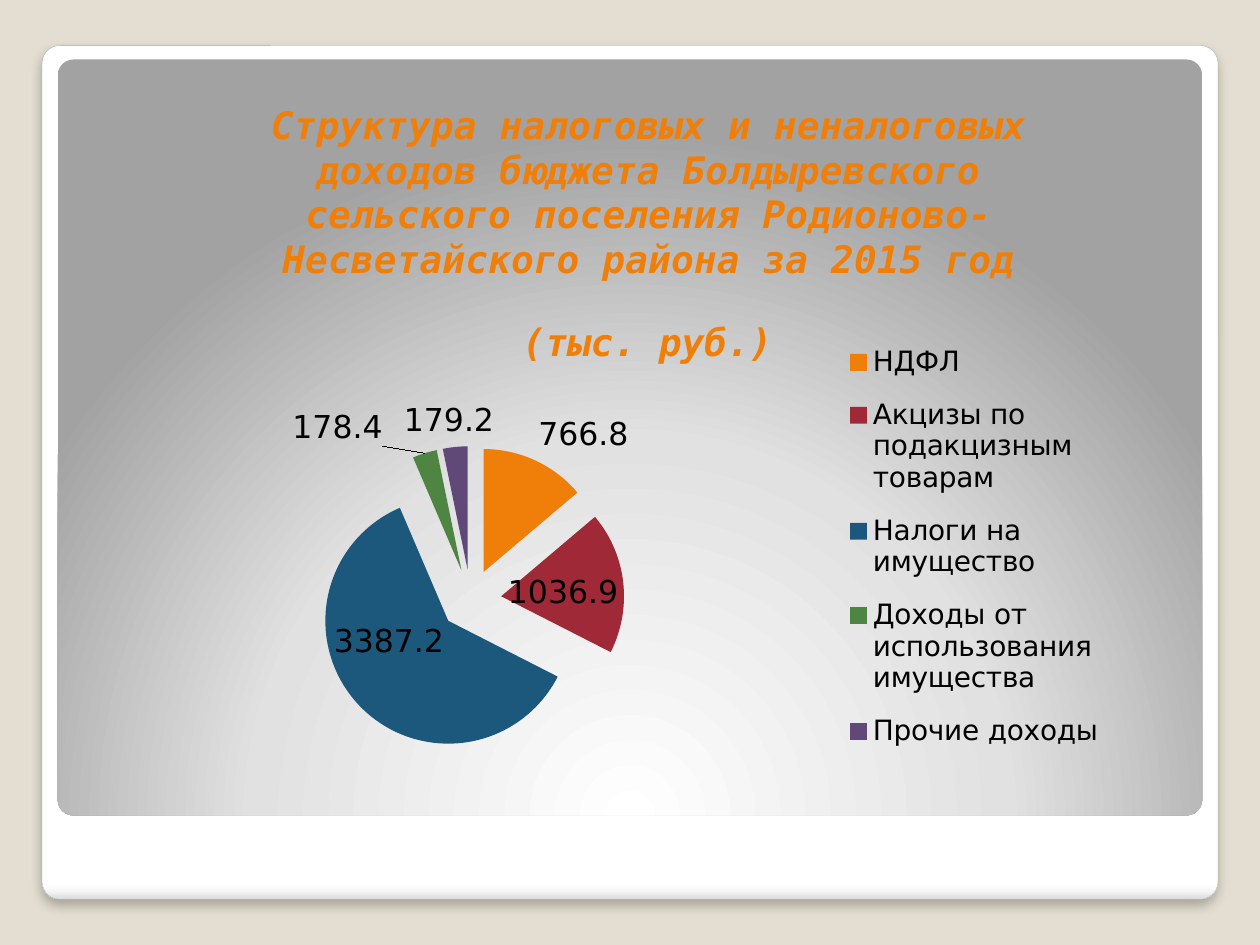
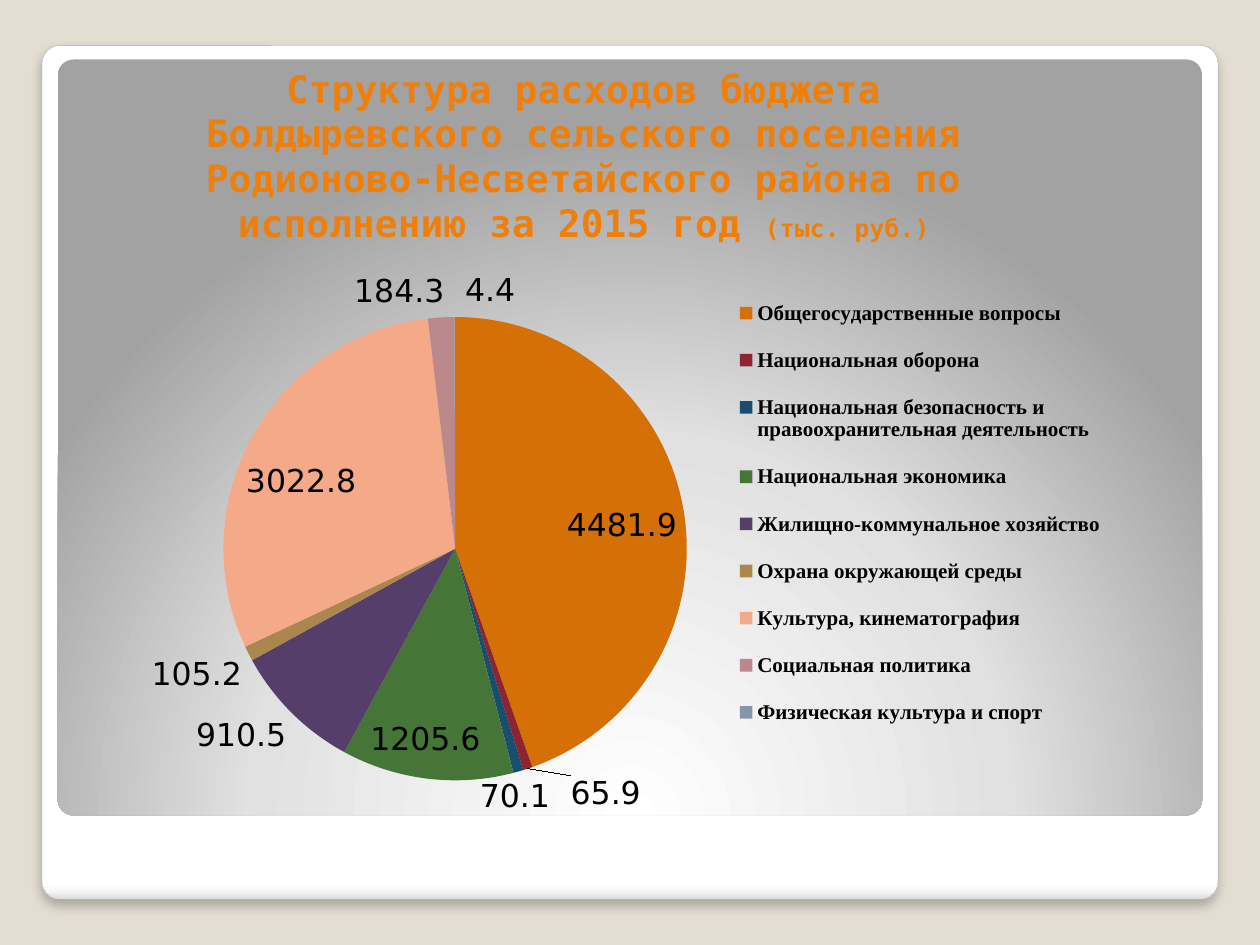
from dataclasses import dataclass

from lxml import etree
from pptx import Presentation
from pptx import util as u
from pptx.chart.data import CategoryChartData
from pptx.dml.color import RGBColor
from pptx.enum import chart as charts, shapes, text
from pptx.oxml import ns, parse_xml


@dataclass(frozen=True)
class Theme:
    canvas: str = "E3DED1"
    edge: str = "A4A4A4"
    accent: str = "F07F09"
    ink: str = "000000"
    frame_stops: tuple = ((0, "FFFFFF"), (98, "FFFFFF"), (99, "F7F7F7"), (100, "DADADA"))
    panel_stops: tuple = ((0, "FFFFFF"), (55, "E1E1E1"), (100, "A2A2A2"))
    income: tuple = ("F07F09", "9F2936", "1B587C", "4E8542", "604878")
    spending: tuple = ("D57007", "8D2430", "184E6E", "457637", "553F6A",
                       "AB864E", "F4A988", "BB888C", "8497A9")
    sans: str = "DejaVu Sans"
    mono: str = "DejaVu Sans Mono"
    serif: str = "Times New Roman"
    title: float = 21.6
    label: float = 18
    legend: float = 16
    unit: float = 14
    small: float = 12


class BudgetDeck:
    """Hold the theme and the current slide, and draw each kind of element."""

    def __init__(self, theme):
        self.theme = theme
        self.deck = Presentation()
        self.deck.slide_width, self.deck.slide_height = u.Pt(720), u.Pt(540)
        self.slide = None

    def new_slide(self):
        theme = self.theme
        self.slide = self.deck.slides.add_slide(self.deck.slide_layouts[6])
        backdrop = self.slide.background.fill
        backdrop.solid()
        backdrop.fore_color.rgb = RGBColor.from_string(theme.canvas)
        frame = self.card((24, 26, 672, 488), theme.frame_stops, '<a:lin ang="5400000" scaled="0"/>')
        frame.line.color.rgb = RGBColor.from_string(theme.edge)
        frame.line.width = u.Pt(0.16)
        self.drop_shadow(frame)
        panel = self.card((33, 34, 654, 432), theme.panel_stops,
                          '<a:path path="circle"><a:fillToRect l="50000" t="175000"'
                          ' r="50000" b="-75000"/></a:path>')
        panel.line.fill.background()

    def card(self, box, stops, direction):
        card = self.slide.shapes.add_shape(shapes.MSO_SHAPE.ROUNDED_RECTANGLE, *map(u.Pt, box))
        card.adjustments[0] = 0.021
        card.shadow.inherit = False
        colours = "".join(f'<a:gs pos="{at * 1000}"><a:srgbClr val="{colour}"/></a:gs>'
                          for at, colour in stops)
        gradient = parse_xml(f'<a:gradFill {ns.nsdecls("a")} rotWithShape="1">'
                             f'<a:gsLst>{colours}</a:gsLst>{direction}</a:gradFill>')
        card._element.spPr.find(ns.qn("a:prstGeom")).addnext(gradient)
        return card

    def drop_shadow(self, card):
        card._element.spPr.find(ns.qn("a:effectLst")).append(parse_xml(
            f'<a:outerShdw {ns.nsdecls("a")} blurRad="{u.Pt(6)}" dist="{u.Pt(4)}" dir="5400000"'
            f' algn="t" rotWithShape="0"><a:srgbClr val="{self.theme.ink}">'
            '<a:alpha val="25000"/></a:srgbClr></a:outerShdw>'))

    def style(self, font, face, size, colour, bold=False, italic=False):
        font.name, font.size, font.bold, font.italic = face, u.Pt(size), bold, italic
        font.color.rgb = RGBColor.from_string(colour)

    def heading(self, frame, parts, italic=False):
        line = frame.paragraphs[0]
        line.alignment = text.PP_ALIGN.CENTER
        for wording, size in parts:
            run = line.add_run()
            run.text = wording
            self.style(run.font, self.theme.mono, size, self.theme.accent, True, italic)

    def caption(self, box, parts, italic=False):
        frame = self.slide.shapes.add_textbox(*map(u.Pt, box)).text_frame
        frame.word_wrap = True
        frame.vertical_anchor = text.MSO_ANCHOR.MIDDLE
        self.heading(frame, parts, italic)

    def place(self, chart, part, **layout):
        holder = chart._chartSpace.find(".//" + ns.qn(f"c:{part}"))
        for old in holder.findall(ns.qn("c:layout")):
            holder.remove(old)
        target = '<c:layoutTarget val="inner"/>' if part == "plotArea" else ""
        modes = '<c:xMode val="edge"/><c:yMode val="edge"/>'
        numbers = "".join(f'<c:{key} val="{value}"/>' for key, value in layout.items())
        leading = [child for child in holder if child.tag in (ns.qn("c:tx"), ns.qn("c:legendPos"))]
        holder.insert(len(leading), parse_xml(
            f'<c:layout {ns.nsdecls("c")}><c:manualLayout>{target}{modes}{numbers}'
            '</c:manualLayout></c:layout>'))

    def pie(self, box, amounts, colours, title, italic, legend_font, layouts, explosion=0):
        theme = self.theme
        budget = CategoryChartData(number_format="0.0")
        budget.categories = list(amounts)
        budget.add_series("Series 1", amounts.values())
        chart = self.slide.shapes.add_chart(
            charts.XL_CHART_TYPE.PIE, *map(u.Pt, box), budget).chart
        self.style(chart.font, theme.sans, theme.label, theme.ink)
        chart.has_title = True
        self.heading(chart.chart_title.text_frame, title, italic)
        chart.has_legend = True
        chart.legend.position = charts.XL_LEGEND_POSITION.RIGHT
        chart.legend.include_in_layout = False
        self.style(chart.legend.font, *legend_font)

        plot = chart.plots[0]
        plot.vary_by_categories = True
        plot.has_data_labels = True
        labels = plot.data_labels
        labels.show_value = True
        labels.number_format, labels.number_format_is_linked = "0.0", False
        labels.position = charts.XL_LABEL_POSITION.BEST_FIT
        self.style(labels.font, theme.sans, theme.label, theme.ink)

        series = plot.series[0]
        for index, colour in enumerate(colours):
            fill = series.points[index].format.fill
            fill.solid()
            fill.fore_color.rgb = RGBColor.from_string(colour)
        if explosion:
            burst = etree.Element(ns.qn("c:explosion"), val=str(explosion))
            series._element.find(ns.qn("c:dPt")).addprevious(burst)
        for part, layout in layouts.items():
            self.place(chart, part, **layout)


def main():
    theme = Theme()
    deck = BudgetDeck(theme)

    deck.new_slide()
    deck.pie(
        (48, 49, 605.5, 402.5),
        {"НДФЛ": 766.8, "Акцизы по подакцизным товарам": 1036.9, "Налоги на имущество": 3387.2,
         "Доходы от использования имущества": 178.4, "Прочие доходы": 179.2},
        theme.income,
        [("Структура налоговых и неналоговых доходов бюджета Болдыревского сельского "
          "поселения Родионово-Несветайского района за 2015 год", theme.title)],
        True,
        (theme.sans, theme.legend, theme.ink),
        {"title": dict(x=0.17, y=0.01),
         "plotArea": dict(x=0.22, y=0.51, w=0.29, h=0.44),
         "legend": dict(x=0.71, y=0.34, w=0.26, h=0.63)},
        explosion=25)
    deck.caption((290, 180, 160, 30), [("(тыс. руб.)", theme.title)], italic=True)

    deck.new_slide()
    deck.pie(
        (44.6, 26, 590.4, 456.5),
        {"Общегосударственные вопросы": 4481.9, "Национальная оборона": 65.9,
         "Национальная безопасность и правоохранительная деятельность": 70.1,
         "Национальная экономика": 1205.6, "Жилищно-коммунальное хозяйство": 910.5,
         "Охрана окружающей среды": 105.2, "Культура, кинематография": 3022.8,
         "Социальная политика": 184.3, "Физическая культура и спорт": 4.4},
        theme.spending,
        [("Структура расходов бюджета Болдыревского сельского поселения "
          "Родионово-Несветайского района по исполнению за 2015 год ", theme.title),
         ("(тыс. руб.)", theme.unit)],
        False,
        (theme.serif, theme.small, theme.ink, True),
        {"title": dict(x=0.12, y=0.02),
         "plotArea": dict(x=0.14, y=0.34, w=0.45, h=0.58),
         "legend": dict(x=0.63, y=0.29, w=0.37, h=0.59)})

    deck.deck.save("out.pptx")


if __name__ == "__main__":
    main()
